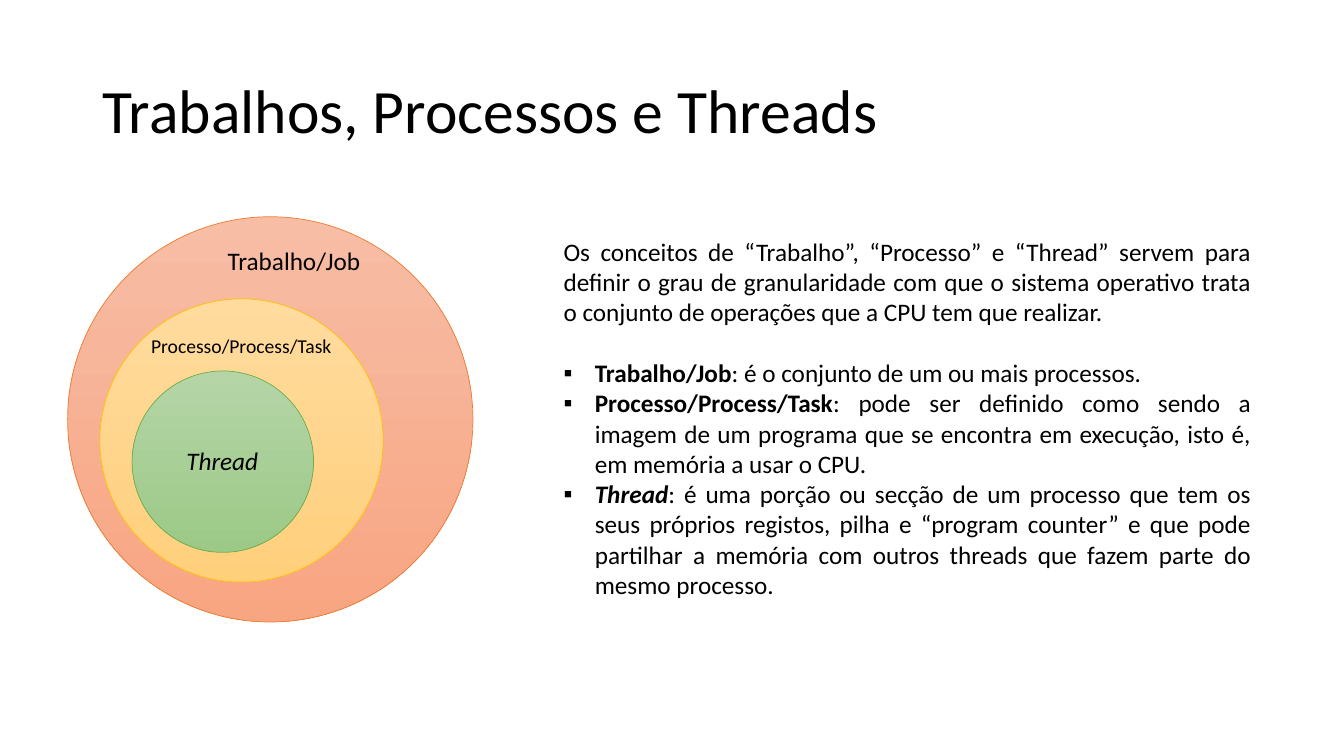
from lxml.etree import SubElement
from pptx import Presentation
from pptx.dml.color import RGBColor
from pptx.enum.shapes import MSO_SHAPE as Shape
from pptx.enum.text import MSO_ANCHOR as Anchor, MSO_AUTO_SIZE as AutoSize, PP_ALIGN as Align
from pptx.oxml.ns import qn
from pptx.util import Inches, Pt

BLACK = RGBColor(0x00, 0x00, 0x00)
JOB_TOP, JOB_BASE, JOB_EDGE = (
    RGBColor(0xF7, 0xBD, 0xA5), RGBColor(0xF8, 0xA5, 0x82), RGBColor(0xED, 0x7D, 0x31))
PROCESS_TOP, PROCESS_BASE, PROCESS_EDGE = (
    RGBColor(0xFF, 0xDB, 0x9E), RGBColor(0xFF, 0xD0, 0x7C), RGBColor(0xFF, 0xC0, 0x00))
THREAD_TOP, THREAD_BASE, THREAD_EDGE = (
    RGBColor(0xB5, 0xD5, 0xA7), RGBColor(0x9C, 0xC9, 0x87), RGBColor(0x70, 0xAD, 0x47))

TITLE = "Trabalhos, Processos e Threads"
INTRO = ("Os conceitos de “Trabalho”, “Processo” e “Thread” servem para definir o grau de "
         "granularidade com que o sistema operativo trata o conjunto de operações que a CPU "
         "tem que realizar.")
DEFINITIONS = [
    ("Trabalho/Job", ": é o conjunto de um ou mais processos.", {}),
    ("Processo/Process/Task", ": pode ser definido como sendo a imagem de um programa que se "
     "encontra em execução, isto é, em memória a usar o CPU.", {}),
    ("Thread", ": é uma porção ou secção de um processo que tem os seus próprios registos, "
     "pilha e “program counter” e que pode partilhar a memória com outros threads que fazem "
     "parte do mesmo processo.", {"italic": True}),
]

# Boxes are left, top, width, height in percent of the slide
TITLE_BOX = (6.9, 5.33, 86.25, 19.33)
BODY_BOX = (41.18, 30.53, 52.66, 49.87)
# Diameter in percent of the slide height, gradient top and base, outline
RINGS = [
    (53.6, JOB_TOP, JOB_BASE, JOB_EDGE),
    (37.47, PROCESS_TOP, PROCESS_BASE, PROCESS_EDGE),
    (24, THREAD_TOP, THREAD_BASE, THREAD_EDGE),
]
RING_LEFT, RING_LEFT_STEP = 5.03, 2.4
RING_MIDDLE, RING_MIDDLE_STEP = 55.47, 2.8
RING_LABELS = [
    ("Trabalho/Job", (16.2, 31.73, 11.48, 5.33), {}),
    ("Processo/Process/Task", (10.5, 43.47, 15.08, 4.53), {"size": Pt(14)}),
    ("Thread", (13.13, 58.27, 6.9, 5.33), {"italic": True}),
]


class ConceptSlide:
    FONT = {"name": "Calibri", "size": Pt(18)}
    INDENT = Inches(0.31)

    def __init__(self, deck):
        self.width, self.height = deck.slide_width, deck.slide_height
        self.slide = deck.slides.add_slide(deck.slide_layouts[1])
        self.rings = self.slide.shapes.add_group_shape().shapes

    def x(self, percent):
        return round(self.width * percent / 100)

    def y(self, percent):
        return round(self.height * percent / 100)

    def box(self, left, top, width, height):
        return self.x(left), self.y(top), self.x(width), self.y(height)

    def place(self, holder, box):
        holder.left, holder.top, holder.width, holder.height = self.box(*box)

    def add_text(self, paragraph, text, **font_format):
        run = paragraph.add_run()
        run.text = text
        for attribute, value in {**self.FONT, **font_format}.items():
            setattr(run.font, attribute, value)
        run.font.color.rgb = BLACK

    def title(self, text, box):
        heading = self.slide.shapes.title
        self.place(heading, box)
        heading.text_frame.vertical_anchor = Anchor.MIDDLE
        line = heading.text_frame.paragraphs[0]
        line.alignment, line.line_spacing = Align.LEFT, 0.9
        self.add_text(line, text, size=Pt(44))

    def justify(self, paragraph, bullet=None):
        """Justify a body paragraph, hanging it behind a bullet if one is given."""
        paragraph.alignment = Align.JUSTIFY
        paragraph.space_before = Pt(0)
        properties = paragraph._p.get_or_add_pPr()
        indent = self.INDENT if bullet else 0
        properties.set("marL", str(indent))
        properties.set("indent", str(-indent))
        if bullet:
            SubElement(properties, qn("a:buFont"), typeface="Arial")
            SubElement(properties, qn("a:buChar"), char=bullet)
        else:
            SubElement(properties, qn("a:buNone"))

    def body(self, intro, definitions, box):
        holder = self.slide.placeholders[1]
        self.place(holder, box)
        frame = holder.text_frame
        frame.auto_size, frame.vertical_anchor = AutoSize.NONE, Anchor.TOP
        opening = frame.paragraphs[0]
        opening.space_after = Pt(22)
        self.justify(opening)
        self.add_text(opening, intro)
        for term, meaning, term_format in definitions:
            definition = frame.add_paragraph()
            self.justify(definition, "▪")
            self.add_text(definition, term, bold=True, **term_format)
            self.add_text(definition, meaning)

    def ring(self, left, middle, diameter, top_color, base_color, edge):
        side = self.y(diameter)
        circle = self.rings.add_shape(
            Shape.OVAL, self.x(left), self.y(middle) - side // 2, side, side)
        circle.shadow.inherit = False
        circle.fill.gradient()
        circle.fill.gradient_angle = 270
        for stop, color in zip(circle.fill.gradient_stops, (top_color, base_color)):
            stop.color.rgb = color
        circle.line.color.rgb = edge
        circle.line.width = Pt(0.5)

    def label(self, text, box, font_format):
        frame = self.rings.add_textbox(*self.box(*box)).text_frame
        frame.word_wrap, frame.auto_size = False, AutoSize.SHAPE_TO_FIT_TEXT
        self.add_text(frame.paragraphs[0], text, **font_format)


def main():
    deck = Presentation()
    deck.slide_width, deck.slide_height = Inches(13.33), Inches(7.5)
    concepts = ConceptSlide(deck)
    concepts.title(TITLE, TITLE_BOX)
    concepts.body(INTRO, DEFINITIONS, BODY_BOX)
    for level, (diameter, *colors) in enumerate(RINGS):
        concepts.ring(RING_LEFT + level * RING_LEFT_STEP,
                      RING_MIDDLE + level * RING_MIDDLE_STEP, diameter, *colors)
    for text, box, font_format in RING_LABELS:
        concepts.label(text, box, font_format)
    deck.save("out.pptx")


if __name__ == "__main__":
    main()
